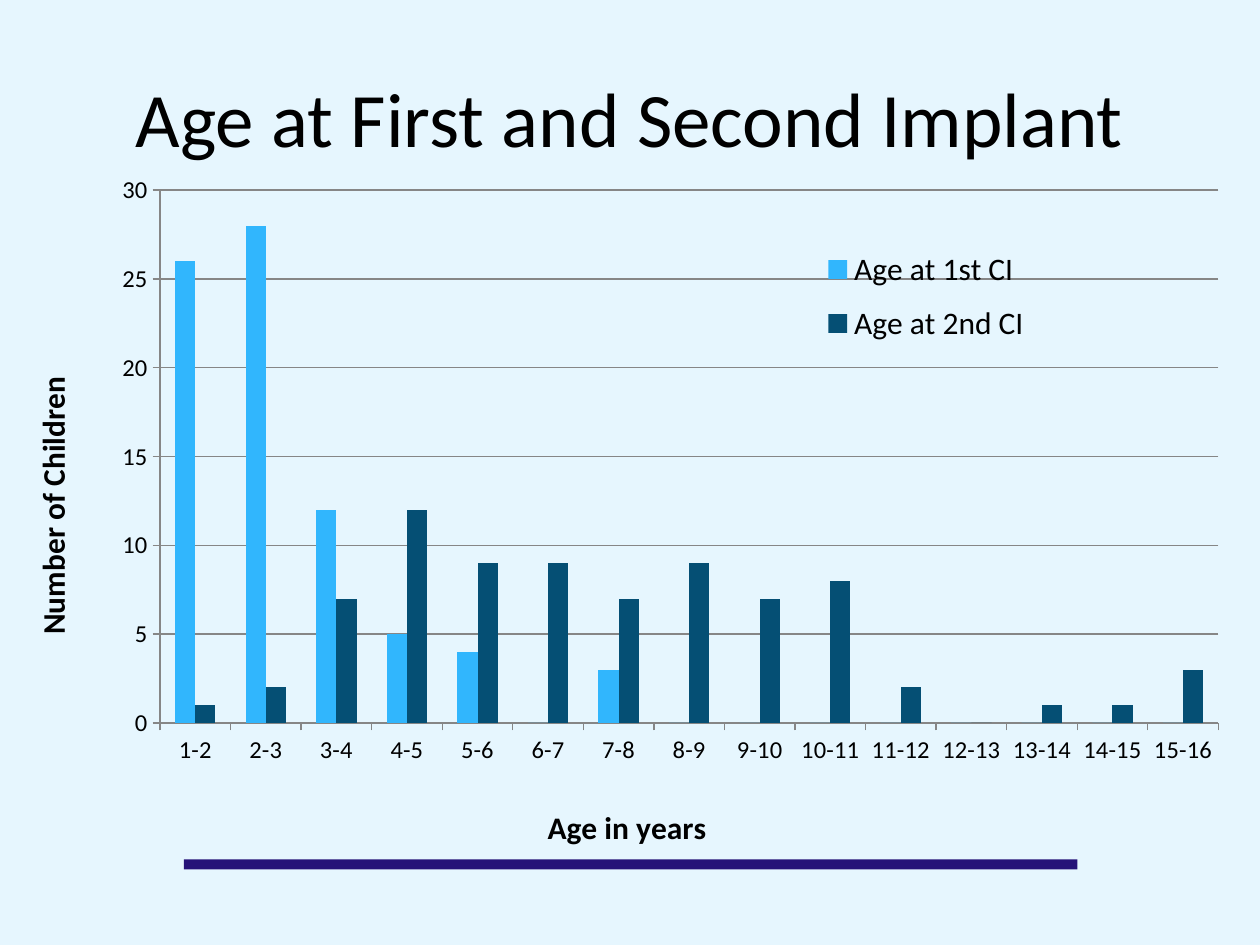
"""Build a slide with a column chart of ages at first and second implant."""
from lxml import etree
from pptx import Presentation
from pptx.chart.data import CategoryChartData
from pptx.dml.color import RGBColor
from pptx.enum.chart import XL_CHART_TYPE as CT, XL_LEGEND_POSITION as LP, XL_TICK_MARK as TM
from pptx.enum.shapes import MSO_SHAPE
from pptx.enum.text import MSO_ANCHOR, PP_ALIGN
from pptx.oxml.ns import qn
from pptx.util import Inches, Pt

COLORS = {k: RGBColor.from_string(v) for k, v in {
    "bg": "E6F6FE", "rule": "251278", "text": "000000", "grid": "868686",
    "first": "31B6FD", "second": "054F74"}.items()}
FONT = "Calibri"


def style(font, size, bold=False):
    font.name, font.size, font.bold = FONT, Pt(size), bold
    font.color.rgb = COLORS["text"]


def place(element, index, **values):
    for old in element.findall(qn("c:layout")):
        element.remove(old)
    layout = etree.Element(qn("c:layout"))
    manual = etree.SubElement(layout, qn("c:manualLayout"))
    for tag, value in values.items():
        etree.SubElement(manual, qn(f"c:{tag}")).set("val", str(value))
    element.insert(index, layout)


prs = Presentation()
prs.slide_width, prs.slide_height = Inches(10), Inches(7.5)
slide = prs.slides.add_slide(prs.slide_layouts[5])
slide.background.fill.solid()
slide.background.fill.fore_color.rgb = COLORS["bg"]

rule = slide.shapes.add_shape(MSO_SHAPE.RECTANGLE, Inches(1.46), Inches(6.82), Inches(7.09), Inches(0.08))
rule.shadow.inherit = False
rule.fill.solid()
rule.fill.fore_color.rgb = COLORS["rule"]
rule.line.fill.background()

title = slide.shapes.title
title.left, title.top, title.width, title.height = Inches(0.5), Inches(0.3), Inches(9), Inches(1.25)
tf = title.text_frame
tf.vertical_anchor = MSO_ANCHOR.MIDDLE
p = tf.paragraphs[0]
p.alignment = PP_ALIGN.CENTER
r = p.add_run()
r.text = "Age at First and Second Implant"
style(r.font, 44)

data = CategoryChartData()
data.categories = [f"{age}-{age + 1}" for age in range(1, 16)]
data.add_series("Age at 1st CI", [26, 28, 12, 5, 4, 0, 3, 0, 0, 0, 0, 0, 0, 0, 0])
data.add_series("Age at 2nd CI", [1, 2, 7, 12, 9, 9, 7, 9, 7, 8, 2, 0, 1, 1, 3])
chart = slide.shapes.add_chart(CT.COLUMN_CLUSTERED, Inches(0), Inches(1.39), Inches(10), Inches(5.51), data).chart
chart.has_title = False
style(chart.font, 10)
plot = chart.plots[0]
plot.gap_width, plot.overlap, plot.vary_by_categories = 150, 0, False
for series, name in zip(plot.series, ("first", "second")):
    series.format.fill.solid()
    series.format.fill.fore_color.rgb = COLORS[name]
place(chart._chartSpace.chart.plotArea, 0, layoutTarget="inner", xMode="edge", yMode="edge",
      x=0.127, y=0.016, w=0.84, h=0.772)

for axis, text, x, y in ((chart.category_axis, "Age in years", 0.43, 0.9),
                         (chart.value_axis, "Number of Children", 0.02, 0.28)):
    axis.major_tick_mark, axis.minor_tick_mark = TM.OUTSIDE, TM.NONE
    axis.format.line.color.rgb = COLORS["grid"]
    axis.format.line.width = Pt(0.75)
    style(axis.tick_labels.font, 14)
    r = axis.axis_title.text_frame.paragraphs[0].add_run()
    r.text = text
    style(r.font, 18, True)
    place(axis.axis_title._element, 1, xMode="edge", yMode="edge", x=x, y=y)

value_axis = chart.value_axis
value_axis.minimum_scale, value_axis.maximum_scale, value_axis.major_unit = 0, 30, 5
value_axis.has_major_gridlines = True
value_axis.major_gridlines.format.line.color.rgb = COLORS["grid"]
value_axis.major_gridlines.format.line.width = Pt(0.75)

chart.has_legend = True
legend = chart.legend
legend.position = LP.RIGHT
legend.include_in_layout = False
style(legend.font, 18)
place(legend._element, 1, xMode="edge", yMode="edge", x=0.61, y=0.08, w=0.25, h=0.18)

prs.save("out.pptx")
